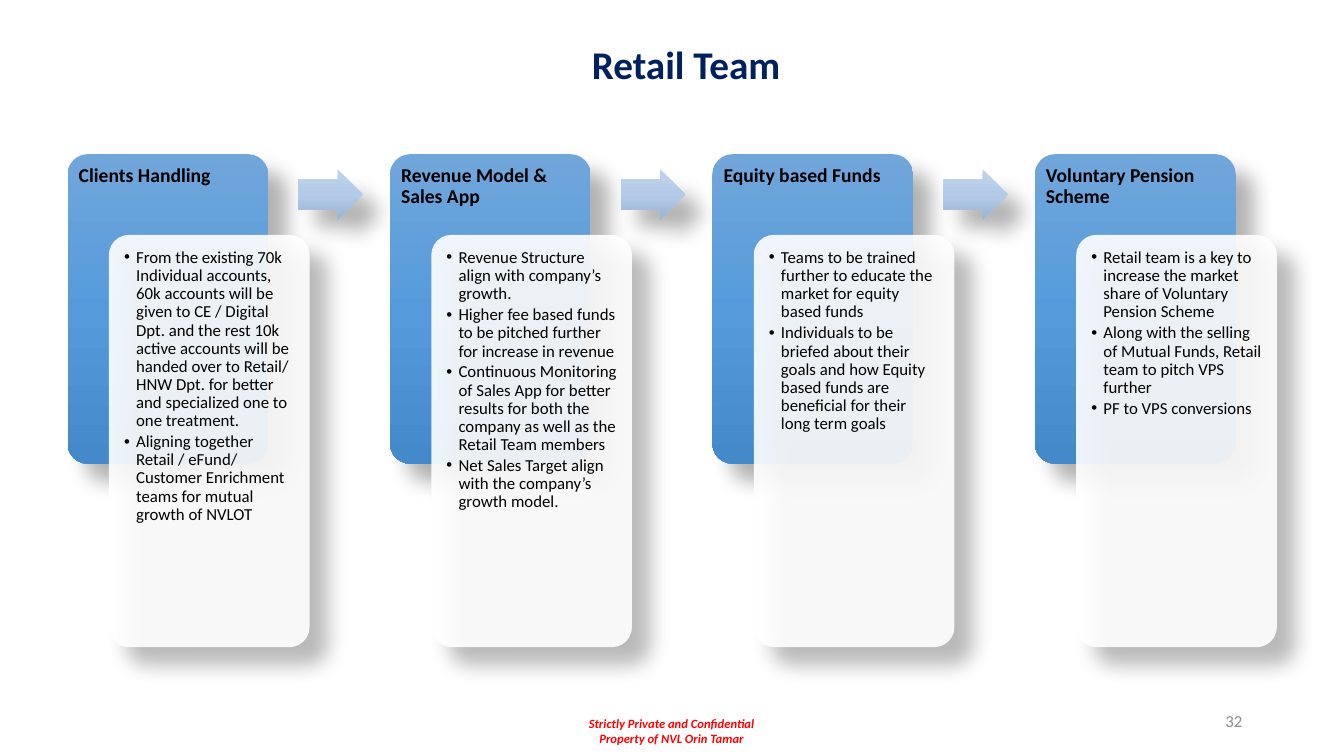
from copy import deepcopy
from lxml.etree import SubElement
from pptx import Presentation
from pptx.dml.color import RGBColor
from pptx.enum.shapes import MSO_SHAPE
from pptx.enum.text import MSO_ANCHOR, PP_ALIGN
from pptx.oxml import parse_xml
from pptx.oxml.ns import qn
from pptx.util import Inches, Pt

NS = 'xmlns:a="http://schemas.openxmlformats.org/drawingml/2006/main"'
SHADOW = (f'<a:effectLst {NS}><a:outerShdw blurRad="{Pt(15)}" dist="{Pt(18)}" '
          'dir="2700000" algn="tl" rotWithShape="0"><a:srgbClr val="000000">'
          '<a:alpha val="30000"/></a:srgbClr></a:outerShdw></a:effectLst>')
BLUE = ["71A6DB", "559BDB", "448ACA"]
PALE = ["C0D2EB", "B3CBE9", "9BB4D3"]

prs = Presentation()
prs.slide_width, prs.slide_height = Inches(13.33), Inches(7.5)
slide = prs.slides.add_slide(prs.slide_layouts[6])


def block(kind, box, adjust, colors):
    """Shadowed shape: three colours make a gradient, one a translucent fill."""
    shape = slide.shapes.add_shape(kind, *map(Inches, box))
    for i, value in enumerate(adjust):
        shape.adjustments[i] = value
    props = shape._element.spPr
    if len(colors) == 3:
        shape.fill.gradient()
        shape.fill.gradient_angle = 270
        stops = props.find(".//" + qn("a:gsLst"))
        stops.insert(1, deepcopy(stops[0]))
        for i, stop in enumerate(shape.fill.gradient_stops):
            stop.position = i / 2
            stop.color.rgb = RGBColor.from_string(colors[i])
    else:
        shape.fill.solid()
        shape.fill.fore_color.rgb = RGBColor.from_string(colors[0])
        color = props.find(".//" + qn("a:srgbClr"))
        SubElement(color, qn("a:alpha"), val="90000")
    shape.line.fill.background()
    props.append(parse_xml(SHADOW))


def write(box, lines, size, color, align=PP_ALIGN.LEFT, bold=False,
          margins=(0.1, 0.05, 0.1, 0.05), bullet=False, spacing=1.0):
    """Text box with one paragraph per line; returns its frame."""
    frame = slide.shapes.add_textbox(*map(Inches, box)).text_frame
    frame.word_wrap = True
    (frame.margin_left, frame.margin_top,
     frame.margin_right, frame.margin_bottom) = map(Inches, margins)
    frame.text = "\n".join(lines)
    for para in frame.paragraphs:
        para.alignment, para.line_spacing = align, spacing
        if bullet:
            para.space_after = Pt(2)
            props = para._p.get_or_add_pPr()
            props.set("marL", str(Inches(0.12)))
            props.set("indent", str(Inches(-0.12)))
            SubElement(props, qn("a:buFont"), typeface="Arial")
            SubElement(props, qn("a:buChar"), char="•")
        font = para.runs[0].font
        font.name, font.size, font.bold = "Calibri", Pt(size), bold
        font.color.rgb = RGBColor.from_string(color)
    return frame


# Footer
foot = write((5.73, 7.05, 1.86, 0.4),
             ["Strictly Private and Confidential", "Property of NVL Orin Tamar"],
             9, "FF0000", PP_ALIGN.CENTER, True)
foot.word_wrap = False
for para in foot.paragraphs:
    para.runs[0].font.italic = True

# Four steps, each a heading card, a detail card and an arrow to the next
steps = [
    ("Clients Handling", [
        "From the existing 70k Individual accounts, 60k accounts will be given to "
        "CE / Digital Dpt. and the rest 10k active accounts will be handed over to "
        "Retail/ HNW Dpt. for better and specialized one to one treatment.",
        "Aligning together Retail / eFund/ Customer Enrichment teams for mutual "
        "growth of NVLOT"]),
    ("Revenue Model & Sales App", [
        "Revenue Structure align with company’s growth.",
        "Higher fee based funds to be pitched further for increase in revenue",
        "Continuous Monitoring of Sales App for better results for both the company "
        "as well as the Retail Team members",
        "Net Sales Target align with the company’s growth model."]),
    ("Equity based Funds", [
        "Teams to be trained further to educate the market for equity based funds",
        "Individuals to be briefed about their goals and how Equity based funds are "
        "beneficial for their long term goals"]),
    ("Voluntary Pension Scheme", [
        "Retail team is a key to increase the market share of Voluntary Pension Scheme",
        "Along with the selling of Mutual Funds, Retail team to pitch VPS further",
        "PF to VPS conversions"]),
]
for i, (head, points) in enumerate(steps):
    left = 0.67 + 3.198 * i
    block(MSO_SHAPE.ROUNDED_RECTANGLE, (left, 1.53, 1.99, 3.07), [0.1], BLUE)
    write((left, 1.53, 1.99, 0.8), [head], 14, "000000", bold=True,
          margins=(0.11, 0.11, 0.11, 0.06), spacing=0.9)
    block(MSO_SHAPE.ROUNDED_RECTANGLE, (left + 0.41, 2.33, 1.99, 4.09), [0.1], ["FFFFFF"])
    write((left + 0.47, 2.38, 1.87, 3.98), points, 12, "000000",
          margins=[0.09] * 4, bullet=True, spacing=0.9)
    if i < len(steps) - 1:
        block(MSO_SHAPE.RIGHT_ARROW, (left + 2.29, 1.68, 0.64, 0.5), [0.6, 0.5], PALE)

# Page number and title
page = write((9.42, 6.95, 3, 0.4), ["32"], 12, "8C8C8C", PP_ALIGN.RIGHT)
page.vertical_anchor = MSO_ANCHOR.MIDDLE
write((0.67, 0.35, 12.27, 0.57), ["Retail Team"], 28, "002060", PP_ALIGN.CENTER, True)

prs.save("out.pptx")
